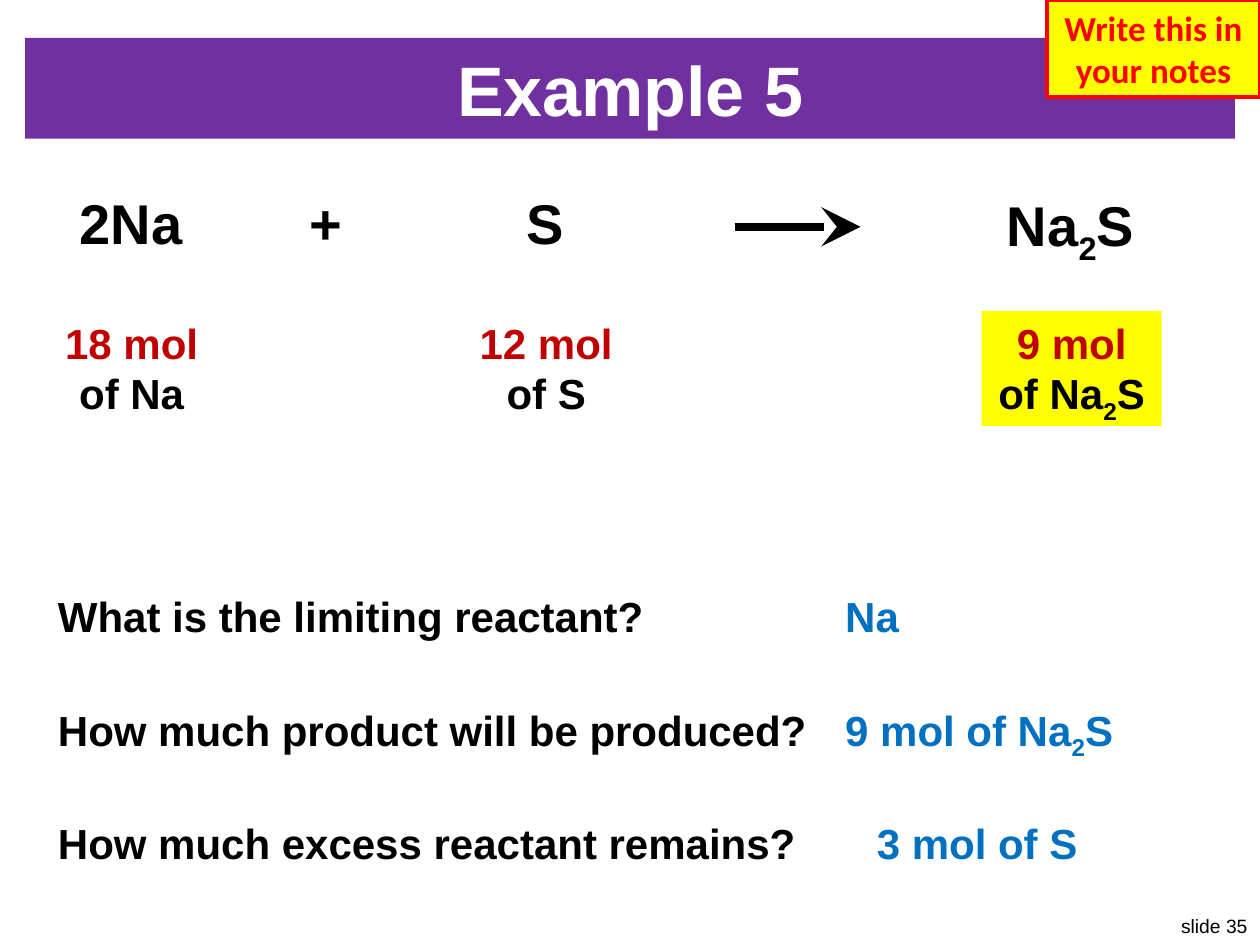
"""Build the Example 5 limiting reactant slide."""
import pptx
import pptx.dml.color
import pptx.enum.shapes
import pptx.enum.text
import pptx.oxml.ns
import pptx.oxml.xmlchemy
import pptx.util

Inches = pptx.util.Inches
Pt = pptx.util.Pt
RGBColor = pptx.dml.color.RGBColor
ALIGN = pptx.enum.text.PP_ALIGN
FIT = pptx.enum.text.MSO_AUTO_SIZE
ANCHOR = pptx.enum.text.MSO_ANCHOR
RECT = pptx.enum.shapes.MSO_SHAPE.RECTANGLE
Element = pptx.oxml.xmlchemy.OxmlElement
qn = pptx.oxml.ns.qn

BLACK = RGBColor(0x00, 0x00, 0x00)
WHITE = RGBColor(0xFF, 0xFF, 0xFF)
PURPLE = RGBColor(0x70, 0x30, 0xA0)
CRIMSON = RGBColor(0xC0, 0x00, 0x00)
RED = RGBColor(0xFF, 0x00, 0x00)
YELLOW = RGBColor(0xFF, 0xFF, 0x00)
BLUE = RGBColor(0x00, 0x70, 0xC0)


def write(frame, lines, size, align, font="Arial", bold=True):
    """Fill a frame with lines of (colour, runs), lowering each "2" run."""
    for i, (color, runs) in enumerate(lines):
        para = frame.paragraphs[0] if i == 0 else frame.add_paragraph()
        para.alignment = align
        for text in runs:
            run = para.add_run()
            run.text = text
            run.font.name = font
            run.font.size = Pt(size)
            run.font.bold = bold
            run.font.color.rgb = color
            if text == "2":
                run._r.get_or_add_rPr().set("baseline", "-25000")


def label(box, lines, size, align=ALIGN.CENTER, bold=True):
    """Add an unwrapped text box that fits its text."""
    shape = slide.shapes.add_textbox(*map(Inches, box))
    shape.text_frame.word_wrap = False
    shape.text_frame.auto_size = FIT.SHAPE_TO_FIT_TEXT
    write(shape.text_frame, lines, size, align, bold=bold)
    return shape


deck = pptx.Presentation()
deck.slide_width = Inches(10)
deck.slide_height = Inches(7.5)
slide = deck.slides.add_slide(deck.slide_layouts[1])

title = slide.shapes.title
title.left, title.top, title.width, title.height = map(Inches, (0.2, 0.3, 9.6, 0.8))
title.fill.solid()
title.fill.fore_color.rgb = PURPLE
title.text_frame.auto_size = FIT.NONE
title.text_frame.vertical_anchor = ANCHOR.MIDDLE
write(title.text_frame, [(WHITE, ["Example 5"])], 40, ALIGN.CENTER)

body = slide.placeholders[1]
body.left, body.top, body.width, body.height = map(Inches, (0.36, 4.64, 7.94, 2.53))
body.text_frame.auto_size = FIT.NONE
asks = [
    "What is the limiting reactant?",
    "How much product will be produced?",
    "How much excess reactant remains?",
]
write(body.text_frame, [(BLACK, [ask]) for ask in asks], 24, ALIGN.LEFT)
for para in body.text_frame.paragraphs:
    para.space_before = Pt(36)
    props = para._p.get_or_add_pPr()
    props.set("marL", "0")
    props.set("indent", "0")
    props.append(Element("a:buNone"))

for box, runs in [
    ((0.53, 1.45, 1.02, 0.64), ["2Na"]),
    ((2.36, 1.45, 0.46, 0.64), ["+"]),
    ((4.08, 1.45, 0.5, 0.64), ["S"]),
    ((7.85, 1.46, 1.29, 0.64), ["Na", "2", "S"]),
]:
    label(box, [(BLACK, runs)], 32)

arrow = slide.shapes.add_connector(
    pptx.enum.shapes.MSO_CONNECTOR.STRAIGHT,
    Inches(5.83), Inches(1.8), Inches(6.83), Inches(1.8))
arrow.line.color.rgb = BLACK
arrow.line.width = Pt(4.5)
head = Element("a:tailEnd")
for key, value in [("type", "stealth"), ("w", "lg"), ("len", "lg")]:
    head.set(key, value)
props = arrow._element.find(qn("p:spPr"))
props.find(qn("a:ln")).append(head)
props.append(Element("a:effectLst"))

for left, width, moles, runs in [
    (0.41, 1.27, "18 mol", ["of Na"]),
    (3.7, 1.27, "12 mol", ["of S"]),
    (7.79, 1.43, "9 mol", ["of Na", "2", "S"]),
]:
    amount = label((left, 2.47, width, 0.91), [(CRIMSON, [moles]), (BLACK, runs)], 24)
amount.fill.solid()
amount.fill.fore_color.rgb = YELLOW

for box, runs, align in [
    ((6.61, 4.64, 0.63, 0.5), ["Na"], ALIGN.LEFT),
    ((6.61, 5.54, 2.4, 0.5), ["9 mol of Na", "2", "S"], ALIGN.LEFT),
    ((6.85, 6.44, 1.81, 0.5), ["3 mol of S"], ALIGN.CENTER),
]:
    label(box, [(BLUE, runs)], 24, align)

label((9.25, 7.21, 0.75, 0.29), [(BLACK, ["slide 35"])], 11, ALIGN.RIGHT, False)

note = slide.shapes.add_shape(RECT, *map(Inches, (8.31, 0, 1.69, 0.77)))
note.shadow.inherit = False
note.fill.solid()
note.fill.fore_color.rgb = YELLOW
note.line.color.rgb = RED
note.line.width = Pt(2.25)
note.text_frame.word_wrap = True
note.text_frame.vertical_anchor = ANCHOR.TOP
write(note.text_frame, [(RED, ["Write this in your notes"])], 20, ALIGN.CENTER, "Calibri")

deck.save("out.pptx")
